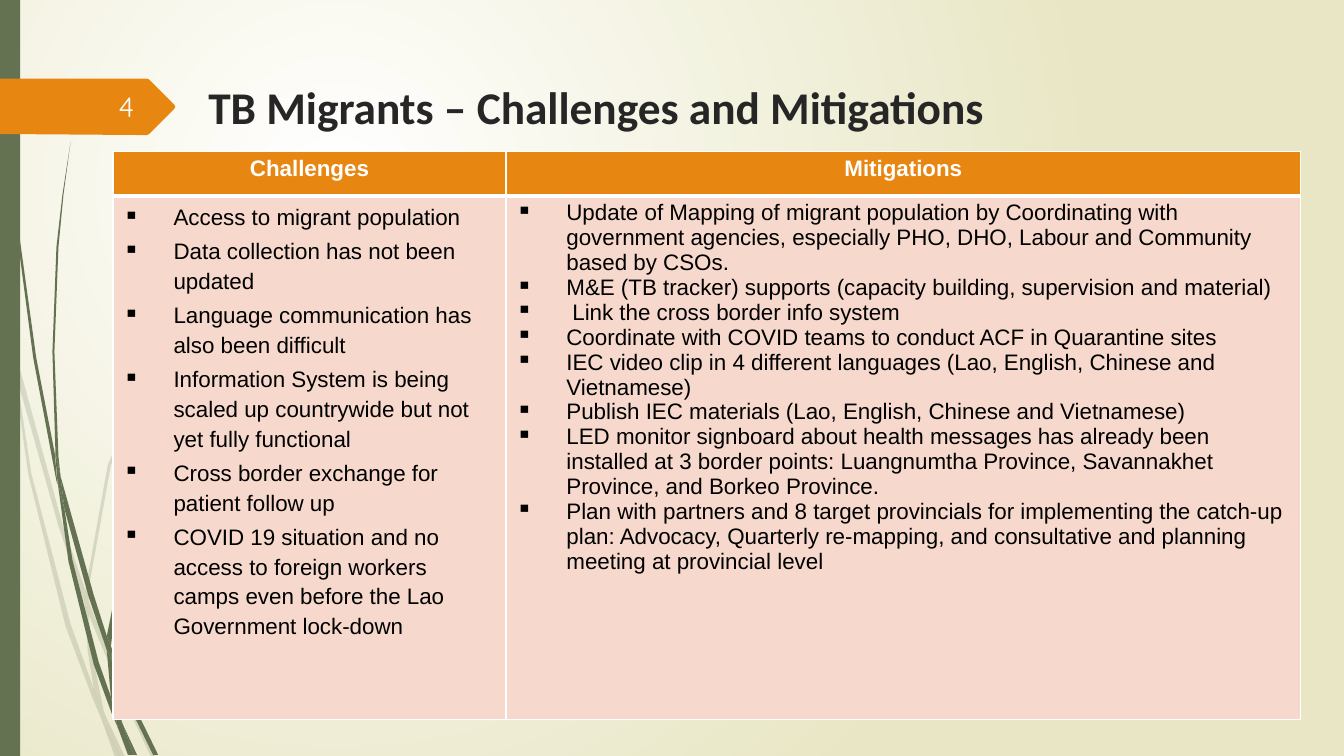
import pptx
import pptx.dml.color
import pptx.enum.shapes
import pptx.enum.text
import pptx.oxml
import pptx.oxml.ns
import pptx.util
from pptx.util import Cm

COLORS = {
    "white": "FFFFFF", "sand": "E8E6C4", "green": "647252", "orange": "E78712",
    "blush": "F6D9CC", "title": "262626", "number": "FEFFFF", "text": "000000",
}
OUTLINE_UNIT = Cm(0.0254)

# Outline corners, in hundredths of an inch.
PALE_GRASS = [
    [(11, 350), (9, 322), (0, 282), (0, 299), (10, 344)],
    [(58, 522), (84, 599), (85, 586), (62, 520), (14, 345), (17, 376)],
    [(92, 607), (88, 596), (88, 610), (123, 694), (150, 751), (155, 751), (127, 692)],
    [(119, 751), (124, 751), (105, 711)],
    [(93, 683), (70, 619), (31, 469), (17, 376), (11, 350), (28, 470), (65, 621),
     (92, 693), (101, 714), (99, 707)],
    [(84, 599), (87, 646), (93, 683), (96, 692), (105, 711), (103, 706), (91, 646),
     (88, 610), (88, 608)],
    [(88, 584), (110, 462), (160, 349), (229, 245), (268, 198), (290, 175), (312, 154),
     (312, 153), (289, 175), (268, 197), (228, 244), (158, 348), (107, 461), (85, 584),
     (85, 586), (88, 596)],
    [(101, 714), (114, 751), (119, 751)],
    [(88, 608), (88, 610), (88, 596), (85, 586), (84, 599)],
    [(96, 692), (93, 683), (99, 707), (101, 714), (119, 751), (105, 711)],
]
DARK_GRASS = [
    [(7, 110), (17, 233), (33, 355), (56, 477), (57, 481), (55, 457), (55, 453),
     (36, 355), (19, 232), (8, 109), (5, 48), (4, 0), (3, 0), (4, 48)],
    [(88, 592), (106, 645), (106, 631), (93, 590), (60, 472), (64, 505)],
    [(113, 649), (110, 641), (111, 656), (132, 708), (152, 749), (157, 749), (136, 706)],
    [(110, 691), (98, 657), (72, 556), (64, 505), (57, 477), (68, 557), (93, 659),
     (111, 708), (117, 722), (116, 717)],
    [(60, 472), (58, 453), (54, 349), (58, 245), (63, 193), (70, 141), (62, 193),
     (56, 245), (52, 349), (55, 449)],
    [(133, 749), (136, 749), (122, 719)],
    [(57, 477), (64, 505), (60, 472), (55, 449), (55, 453)],
    [(111, 633), (125, 552), (158, 476), (205, 406), (231, 374), (245, 359), (261, 344),
     (260, 344), (245, 358), (231, 373), (204, 405), (156, 474), (122, 551), (106, 631),
     (110, 641)],
    [(117, 722), (127, 749), (131, 749)],
    [(106, 645), (110, 691), (116, 706), (122, 719), (121, 716), (111, 656), (109, 651)],
    [(106, 645), (109, 651), (111, 656), (110, 641), (106, 631)],
    [(116, 706), (110, 691), (116, 717), (117, 722), (130, 749), (133, 749), (122, 719)],
]
NUMBER_TAG = [(173, 108), (148, 133), (146, 134), (136, 134), (0, 133), (0, 78),
              (146, 78), (148, 79), (173, 104), (174, 106)]

CHALLENGES = [
    "Access to migrant population",
    "Data collection has not been updated",
    "Language communication has also been difficult",
    "Information System is being scaled up countrywide but not yet fully functional",
    "Cross border exchange for patient follow up",
    "COVID 19 situation and no access to foreign workers camps even before the Lao "
    "Government lock-down",
]
LINK_ITEM = "Link the cross border info system"
MITIGATIONS = [
    "Update of Mapping of migrant population by Coordinating with government agencies, "
    "especially PHO, DHO, Labour and Community based by CSOs.",
    "M&E (TB tracker) supports (capacity building, supervision and material)",
    LINK_ITEM,
    "Coordinate with COVID teams to conduct ACF in Quarantine sites",
    "IEC video clip in 4 different languages (Lao, English, Chinese and Vietnamese)",
    "Publish IEC materials (Lao, English, Chinese and Vietnamese)",
    "LED monitor signboard about health messages has already been installed at 3 border "
    "points: Luangnumtha Province, Savannakhet Province, and Borkeo Province.",
    "Plan with partners and 8 target provincials for implementing the catch-up plan: "
    "Advocacy, Quarterly re-mapping, and consultative and planning meeting at "
    "provincial level",
]


def rgb(color):
    return pptx.dml.color.RGBColor.from_string(COLORS[color])


def add_xml(parent, xml):
    namespace = pptx.oxml.ns.nsdecls("a")
    parent.append(pptx.oxml.parse_xml(xml.replace("/>", f" {namespace}/>", 1)
                                      if xml.endswith("/>") and xml.count("<") == 1
                                      else xml.replace(">", f" {namespace}>", 1)))


def paint(shape, color, alpha=None):
    shape.shadow.inherit = False
    shape.fill.solid()
    shape.fill.fore_color.rgb = rgb(color)
    shape.line.fill.background()
    if alpha:
        srgb = shape.fill._xPr.find(".//" + pptx.oxml.ns.qn("a:srgbClr"))
        add_xml(srgb, f'<a:alpha val="{alpha * 1000}"/>')


def add_outline(slide, corners, color, alpha=None):
    builder = slide.shapes.build_freeform(*corners[0], scale=OUTLINE_UNIT)
    builder.add_line_segments(corners[1:], close=True)
    paint(builder.convert_to_shape(), color, alpha)


def add_run(paragraph, text, size, font, color, bold=False):
    run = paragraph.add_run()
    run.text = text
    run.font.size = pptx.util.Pt(size)
    run.font.name = font
    run.font.bold = bold
    run.font.color.rgb = rgb(color)


def add_label(slide, box, text, size, font, color, bold=False, align="LEFT"):
    frame = slide.shapes.add_textbox(*map(Cm, box)).text_frame
    frame.word_wrap = True
    frame.vertical_anchor = pptx.enum.text.MSO_ANCHOR.MIDDLE
    frame.paragraphs[0].alignment = pptx.enum.text.PP_ALIGN[align]
    add_run(frame.paragraphs[0], text, size, font, color, bold)


def style_cell(cell, color, top, bottom):
    """Give the cell white borders, with top and bottom widths in points, and a fill."""
    properties = cell._tc.get_or_add_tcPr()
    for side, width in (("L", 1), ("R", 1), ("T", top), ("B", bottom)):
        add_xml(properties, f'<a:ln{side} w="{width * 12700}"><a:solidFill>'
                            f'<a:srgbClr val="{COLORS["white"]}"/></a:solidFill></a:ln{side}>')
    cell.fill.solid()
    cell.fill.fore_color.rgb = rgb(color)


def fill_bullets(cell, items, line_spacing=None, space_before=0):
    frame = cell.text_frame
    for index, item in enumerate(items):
        paragraph = frame.add_paragraph() if index else frame.paragraphs[0]
        if line_spacing:
            paragraph.line_spacing = line_spacing
        paragraph.space_before = pptx.util.Pt(space_before)
        properties = paragraph._p.get_or_add_pPr()
        indent = Cm(1.42 if item == LINK_ITEM else 1.27)
        properties.set("marL", str(indent))
        properties.set("indent", str(-indent))
        add_xml(properties, '<a:buChar char="▪"/>')
        add_run(paragraph, item, 16, "Arial", "text")


def add_comparison(slide):
    widths, heights = (9.9, 20.03), (1.12, 13.2)
    table = slide.shapes.add_table(2, 2, Cm(2.85), Cm(3.81),
                                   Cm(sum(widths)), Cm(sum(heights))).table
    for column, width in zip(table.columns, widths):
        column.width = Cm(width)
    for row, height in zip(table.rows, heights):
        row.height = Cm(height)
    for index, heading in enumerate(("Challenges", "Mitigations")):
        header = table.cell(0, index)
        style_cell(header, "orange", 1, 3)
        style_cell(table.cell(1, index), "blush", 3, 1)
        paragraph = header.text_frame.paragraphs[0]
        paragraph.alignment = pptx.enum.text.PP_ALIGN.CENTER
        add_run(paragraph, heading, 16, "Arial", "white", True)
    fill_bullets(table.cell(1, 0), CHALLENGES, 1.2, 3)
    fill_bullets(table.cell(1, 1), MITIGATIONS)


def set_background(slide):
    """Radial gradient centred in the upper left quarter."""
    fill = slide.background.fill
    fill.gradient()
    for stop, color in zip(fill.gradient_stops, ("white", "sand")):
        stop.color.rgb = rgb(color)
    gradient = slide._element.find(".//" + pptx.oxml.ns.qn("a:gradFill"))
    gradient.remove(gradient.find(pptx.oxml.ns.qn("a:lin")))
    add_xml(gradient, '<a:path path="circle"><a:fillToRect l="50000" t="50000" '
                      'r="100000" b="100000"/></a:path>')


def main():
    deck = pptx.Presentation()
    deck.slide_width, deck.slide_height = Cm(33.87), Cm(19.05)
    slide = deck.slides.add_slide(deck.slide_layouts[6])
    set_background(slide)
    for blade in PALE_GRASS:
        add_outline(slide, blade, "green", 20)
    for blade in DARK_GRASS:
        add_outline(slide, blade, "green")
    side_bar = slide.shapes.add_shape(pptx.enum.shapes.MSO_SHAPE.RECTANGLE,
                                      0, 0, Cm(0.51), deck.slide_height)
    paint(side_bar, "green")
    add_outline(slide, NUMBER_TAG, "orange")
    add_label(slide, (5, 1.83, 22.96, 1.7), "TB Migrants – Challenges and Mitigations",
              32.4, "Calibri", "title", bold=True)
    add_label(slide, (1.47, 2.18, 2.16, 1.02), "4", 20, "Quicksand", "number", align="RIGHT")
    add_comparison(slide)
    deck.save("out.pptx")


if __name__ == "__main__":
    main()
